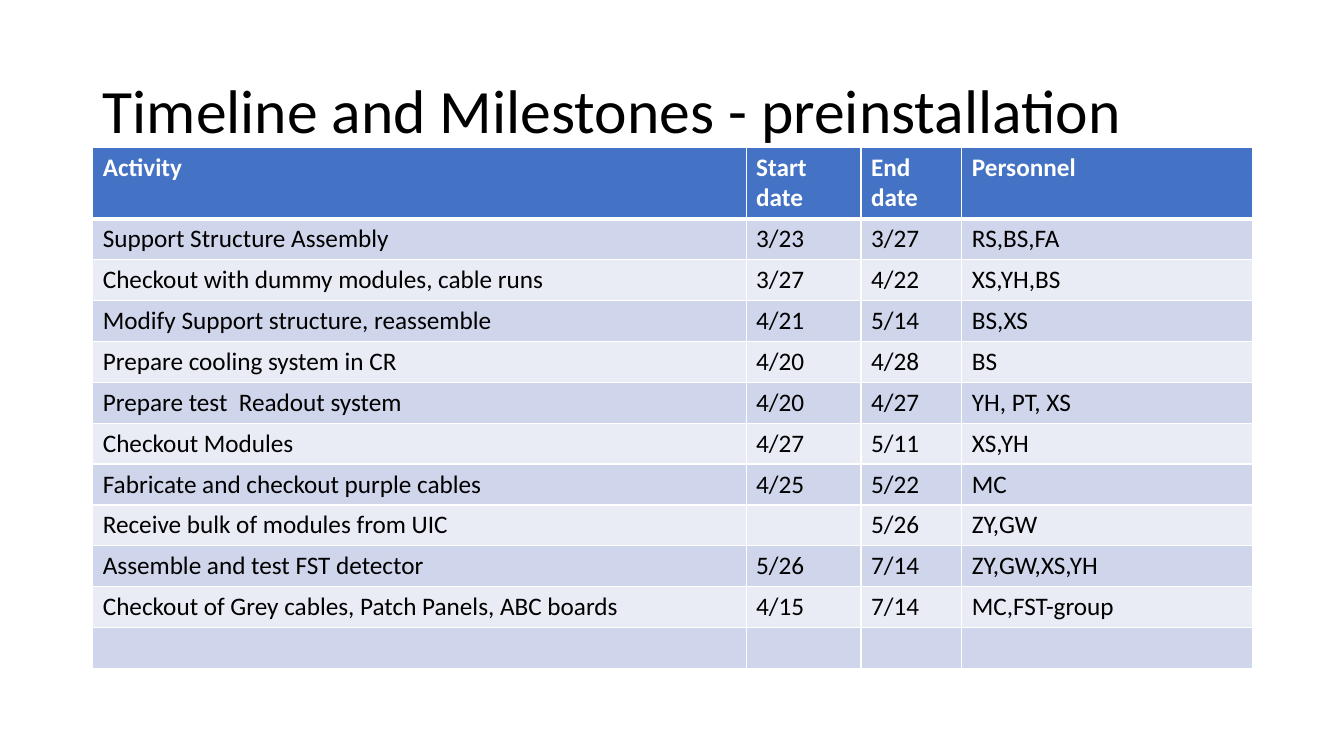
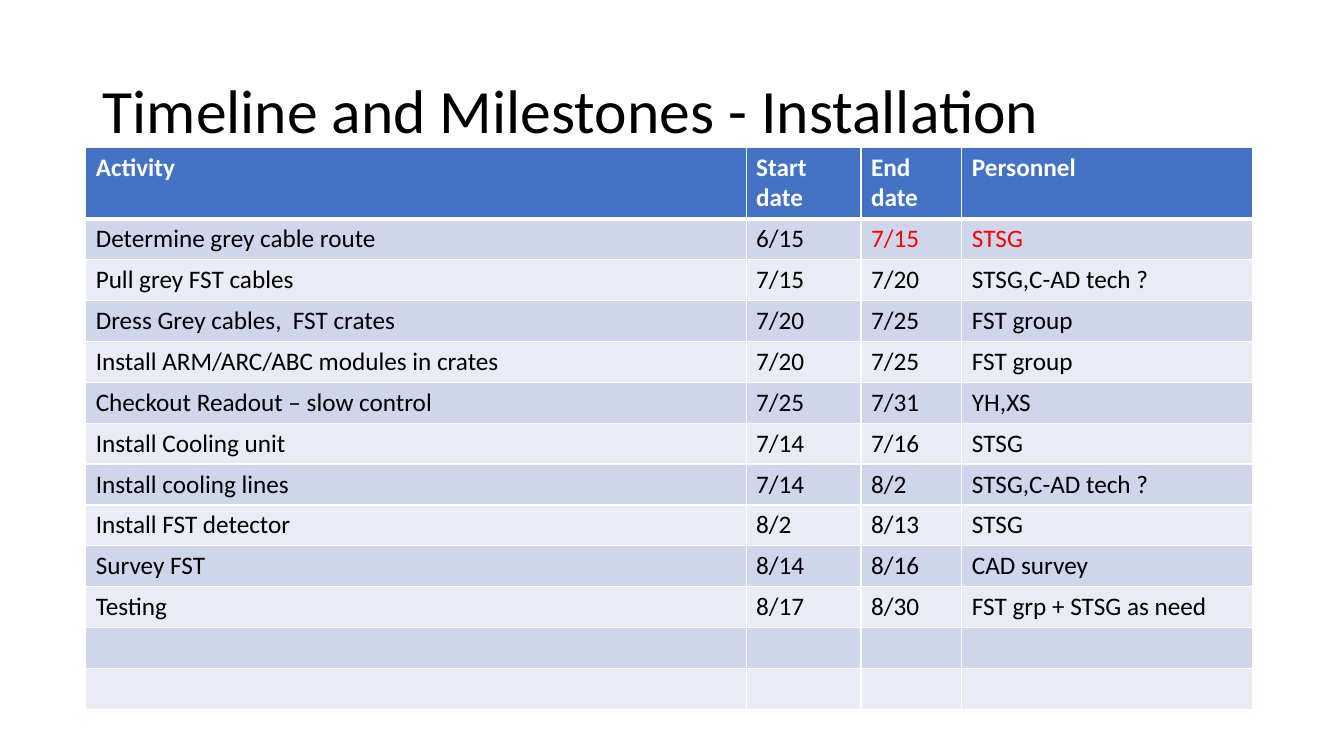
from dataclasses import dataclass

from lxml import etree
from pptx import Presentation
from pptx.dml.color import RGBColor
from pptx.enum.text import MSO_ANCHOR, MSO_AUTO_SIZE, PP_ALIGN
from pptx.oxml.ns import qn
from pptx.util import Inches, Pt

BLACK = RGBColor(0x00, 0x00, 0x00)
WHITE = RGBColor(0xFF, 0xFF, 0xFF)
RED = RGBColor(0xFF, 0x00, 0x00)
HEADER_BLUE = RGBColor(0x44, 0x72, 0xC4)
BAND_COLORS = (RGBColor(0xCF, 0xD5, 0xEA), RGBColor(0xE9, 0xEB, 0xF5))

LEFT = PP_ALIGN.LEFT
MIDDLE = MSO_ANCHOR.MIDDLE
NO_AUTOFIT = MSO_AUTO_SIZE.NONE

FONT = "Calibri"
TITLE_ONLY_LAYOUT = 5
TABLE_TOP = 1.46
TABLE_RIGHT = 12.42
HEADER_HEIGHT = 0.68
ROW_HEIGHT = 0.4
DETAIL_WIDTHS = (1.14, 1.0, 2.88)
HEADINGS = ("Activity", "Start date", "End date", "Personnel")
THIN_BORDER = Pt(1)
THICK_BORDER = Pt(3)


@dataclass(frozen=True)
class Task:
    activity: str = ""
    start: str = ""
    end: str = ""
    personnel: str = ""
    highlighted: bool = False


@dataclass(frozen=True)
class Timeline:
    title: str
    table_left: float
    tasks: tuple[Task, ...]


TIMELINES = (
    Timeline(
        "Timeline and Milestones - preinstallation",
        0.92,
        (
            Task("Support Structure Assembly", "3/23", "3/27", "RS,BS,FA"),
            Task("Checkout with dummy modules, cable runs", "3/27", "4/22", "XS,YH,BS"),
            Task("Modify Support structure, reassemble", "4/21", "5/14", "BS,XS"),
            Task("Prepare cooling system in CR", "4/20", "4/28", "BS"),
            Task("Prepare test  Readout system", "4/20", "4/27", "YH, PT, XS"),
            Task("Checkout Modules", "4/27", "5/11", "XS,YH"),
            Task("Fabricate and checkout purple cables", "4/25", "5/22", "MC"),
            Task("Receive bulk of modules from UIC", "", "5/26", "ZY,GW"),
            Task("Assemble and test FST detector", "5/26", "7/14", "ZY,GW,XS,YH"),
            Task("Checkout of Grey cables, Patch Panels, ABC boards", "4/15", "7/14", "MC,FST-group"),
            Task(),
        ),
    ),
    Timeline(
        "Timeline and Milestones - Installation",
        0.85,
        (
            Task("Determine grey cable route", "6/15", "7/15", "STSG", highlighted=True),
            Task("Pull grey FST cables", "7/15", "7/20", "STSG,C-AD tech ?"),
            Task("Dress Grey cables,  FST crates", "7/20", "7/25", "FST group"),
            Task("Install ARM/ARC/ABC modules in crates", "7/20", "7/25", "FST group"),
            Task("Checkout Readout – slow control", "7/25", "7/31", "YH,XS"),
            Task("Install Cooling unit", "7/14", "7/16", "STSG"),
            Task("Install cooling lines", "7/14", "8/2", "STSG,C-AD tech ?"),
            Task("Install FST detector", "8/2", "8/13", "STSG"),
            Task("Survey FST", "8/14", "8/16", "CAD survey"),
            Task("Testing", "8/17", "8/30", "FST grp + STSG as need"),
            Task(),
            Task(),
        ),
    ),
)


def format_runs(paragraph, size: int, color: RGBColor, bold: bool = False) -> None:
    for run in paragraph.runs:
        run.font.name = FONT
        run.font.size = Pt(size)
        run.font.bold = bold
        run.font.color.rgb = color


def set_borders(cell, top: int, bottom: int) -> None:
    properties = cell._tc.get_or_add_tcPr()
    widths = {"a:lnL": THIN_BORDER, "a:lnR": THIN_BORDER, "a:lnT": top, "a:lnB": bottom}
    for tag, width in widths.items():
        line = etree.SubElement(properties, qn(tag), w=str(int(width)))
        fill = etree.SubElement(line, qn("a:solidFill"))
        etree.SubElement(fill, qn("a:srgbClr"), val=str(WHITE))


def fill_cell(cell, text: str, row: int, color: RGBColor) -> None:
    is_header = row == 0
    set_borders(
        cell,
        top=THICK_BORDER if row == 1 else THIN_BORDER,
        bottom=THICK_BORDER if is_header else THIN_BORDER,
    )
    cell.fill.solid()
    cell.fill.fore_color.rgb = HEADER_BLUE if is_header else BAND_COLORS[(row - 1) % 2]
    cell.text_frame.text = text
    format_runs(cell.text_frame.paragraphs[0], 18, color, bold=is_header)


def add_title(slide, text: str) -> None:
    title = slide.shapes.title
    title.left, title.top = Inches(0.92), Inches(0.4)
    title.width, title.height = Inches(11.5), Inches(1.45)
    text_frame = title.text_frame
    text_frame.text = text
    text_frame.auto_size = NO_AUTOFIT
    text_frame.vertical_anchor = MIDDLE
    paragraph = text_frame.paragraphs[0]
    paragraph.alignment = LEFT
    paragraph.line_spacing = 0.9
    format_runs(paragraph, 44, BLACK)


def add_task_table(slide, timeline: Timeline) -> None:
    table_width = TABLE_RIGHT - timeline.table_left
    widths = (table_width - sum(DETAIL_WIDTHS), *DETAIL_WIDTHS)
    heights = (HEADER_HEIGHT, *[ROW_HEIGHT] * len(timeline.tasks))
    table = slide.shapes.add_table(
        len(heights),
        len(widths),
        Inches(timeline.table_left),
        Inches(TABLE_TOP),
        Inches(table_width),
        Inches(sum(heights)),
    ).table
    for column, width in zip(table.columns, widths):
        column.width = Inches(width)
    for table_row, height in zip(table.rows, heights):
        table_row.height = Inches(height)
    for column, heading in enumerate(HEADINGS):
        fill_cell(table.cell(0, column), heading, 0, WHITE)
    for row, task in enumerate(timeline.tasks, start=1):
        emphasis = RED if task.highlighted else BLACK
        values = (task.activity, task.start, task.end, task.personnel)
        colors = (BLACK, BLACK, emphasis, emphasis)
        for column, (value, color) in enumerate(zip(values, colors)):
            fill_cell(table.cell(row, column), value, row, color)


def main() -> None:
    presentation = Presentation()
    presentation.slide_width = Inches(13.33)
    presentation.slide_height = Inches(7.5)
    layout = presentation.slide_layouts[TITLE_ONLY_LAYOUT]
    for timeline in TIMELINES:
        slide = presentation.slides.add_slide(layout)
        add_title(slide, timeline.title)
        add_task_table(slide, timeline)
    presentation.save("out.pptx")


if __name__ == "__main__":
    main()
